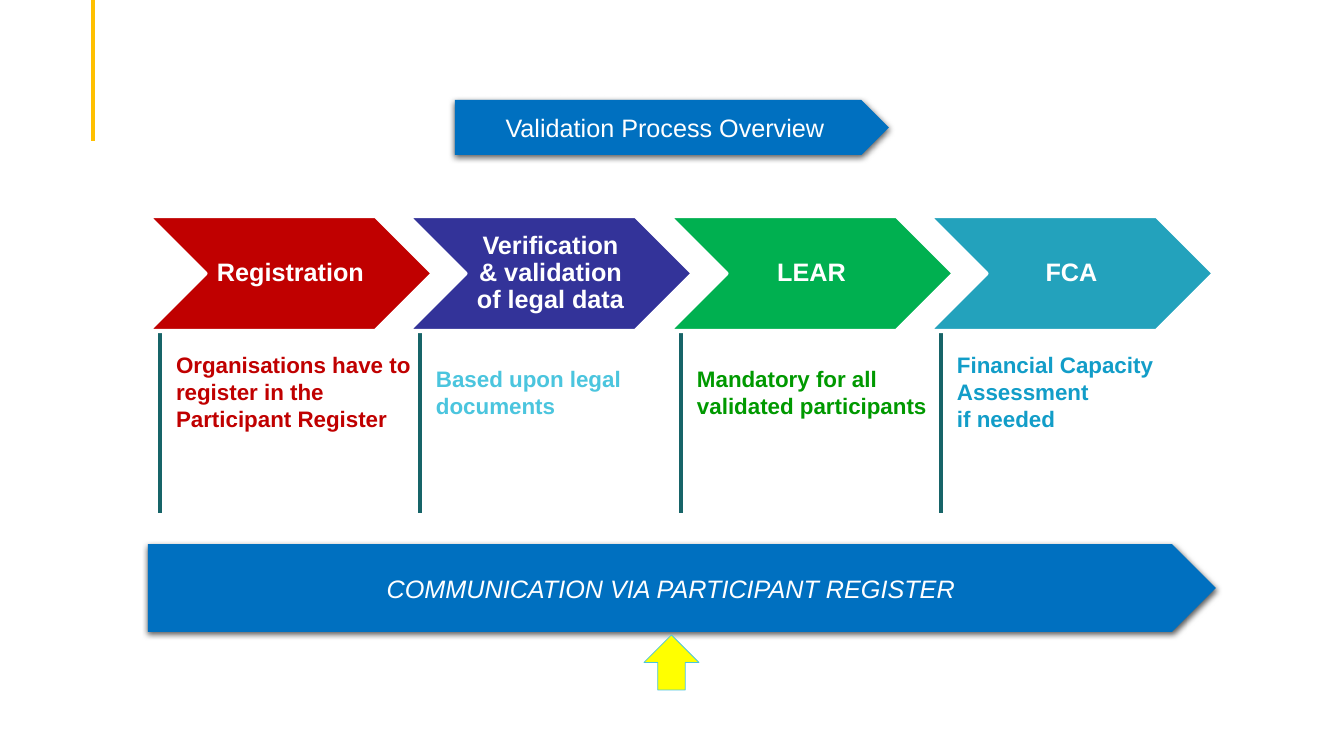
from lxml import etree
from pptx import Presentation
from pptx import util as u
from pptx.dml.color import RGBColor
from pptx.enum import shapes, text
from pptx.oxml.ns import qn

COLORS = {
    "white": "FFFFFF", "black": "000000", "gold": "FFC000", "teal": "176468",
    "blue": "0070C0", "red": "C00000", "indigo": "333399", "green": "00B050",
    "turquoise": "23A2BC", "aqua": "4BC5DE", "leaf": "009900",
    "azure": "129DC8", "yellow": "FFFF00",
}
SHAPE = shapes.MSO_SHAPE
ALIGN = text.PP_ALIGN
ANCHOR = text.MSO_ANCHOR
EMU_PER_PX = 12192000 / 1344
STEP_PITCH = 260.4

# step, step colour, note, note colour, note height
STEPS = [
    ("Registration", "red",
     "Organisations have to register in the Participant Register", "red", 92),
    ("Verification & validation of legal data", "indigo",
     "Based upon legal documents", "aqua", 64),
    ("LEAR", "green", "Mandatory for all validated participants", "leaf", 64),
    ("FCA", "turquoise",
     "Financial Capacity Assessment \vif needed", "azure", 92),
]


def px(value):
    return u.Emu(round(value * EMU_PER_PX))


def rgb(name):
    return RGBColor.from_string(COLORS[name])


class Deck:
    font = "Arial"

    def __init__(self, slide):
        self.slide = slide

    def label(self, sp, words, size, color, bold=False, italic=False,
              align=ALIGN.CENTER, anchor=ANCHOR.MIDDLE, spacing=None):
        tf = sp.text_frame
        tf.word_wrap = True
        tf.vertical_anchor = anchor
        p = tf.paragraphs[0]
        p.text = words
        p.alignment = align
        if spacing:
            p.line_spacing = spacing
        f = p.font
        f.name, f.size, f.bold, f.italic = self.font, u.Pt(size), bold, italic
        f.color.rgb = rgb(color)

    def shape(self, kind, x, y, w, h, fill, line=None, weight=0):
        sp = self.slide.shapes.add_shape(kind, px(x), px(y), px(w), px(h))
        sp.shadow.inherit = False
        sp.fill.solid()
        sp.fill.fore_color.rgb = rgb(fill)
        if line:
            sp.line.color.rgb = rgb(line)
            sp.line.width = u.Pt(weight)
        else:
            sp.line.fill.background()
        return sp

    def banner(self, x, y, w, h):
        sp = self.shape(SHAPE.PENTAGON, x, y, w, h, "blue")
        effects = sp._element.spPr.find(qn("a:effectLst"))
        shadow = etree.SubElement(effects, qn("a:outerShdw"), blurRad="57150",
                                  dist="19050", dir="5400000", rotWithShape="0")
        color = etree.SubElement(shadow, qn("a:srgbClr"), val=COLORS["black"])
        etree.SubElement(color, qn("a:alpha"), val="63000")
        return sp

    def title(self, x, y, w, h, words):
        sp = self.slide.shapes.title
        sp.left, sp.top, sp.width, sp.height = px(x), px(y), px(w), px(h)
        self.label(sp, words, 18, "white")

    def rule(self, x, top, bottom, color, weight):
        line = self.slide.shapes.add_connector(
            shapes.MSO_CONNECTOR.STRAIGHT, px(x), px(top), px(x), px(bottom))
        line.line.color.rgb = rgb(color)
        line.line.width = u.Pt(weight)
        etree.SubElement(line._element.spPr, qn("a:effectLst"))

    def note(self, x, y, w, h, words, color):
        sp = self.slide.shapes.add_textbox(px(x), px(y), px(w), px(h))
        sp.text_frame.margin_left = px(16)
        sp.text_frame.margin_right = 0
        self.label(sp, words, 16, color, bold=True, align=ALIGN.LEFT,
                   anchor=ANCHOR.TOP)


def main():
    prs = Presentation()
    prs.slide_width, prs.slide_height = px(1344), px(756)
    s = Deck(prs.slides.add_slide(prs.slide_layouts[5]))

    # Corner accent
    s.rule(93, 0, 141, "gold", 2.25)

    # Title on its banner; the placeholder goes in front
    s.banner(455, 100, 434, 55)
    s.title(455, 100, 420, 55, "Validation Process Overview")
    tree = s.slide.shapes._spTree
    tree.append(s.slide.shapes.title._element)

    # Notes beside their vertical rules
    for i, (_, _, words, color, height) in enumerate(STEPS):
        x = 160 + round(i * STEP_PITCH)
        s.rule(x, 331, 513, "teal", 3)
        s.note(x, 392 - height // 2, 251, height, words, color)

    # Process chevrons
    for i, (step, color, *_) in enumerate(STEPS):
        sp = s.shape(SHAPE.CHEVRON, 148 + round(i * STEP_PITCH), 216, 285, 115,
                     color, "white", 3)
        s.label(sp, step, 18, "white", bold=True, spacing=0.9)

    # Communication bar and its pointer
    bar = s.banner(148, 544, 1068, 88)
    s.label(bar, "COMMUNICATION VIA PARTICIPANT REGISTER", 18, "white",
            italic=True)
    s.shape(SHAPE.UP_ARROW, 644, 635, 55, 55, "yellow", "aqua", 0.5)

    prs.save("out.pptx")


if __name__ == "__main__":
    main()
